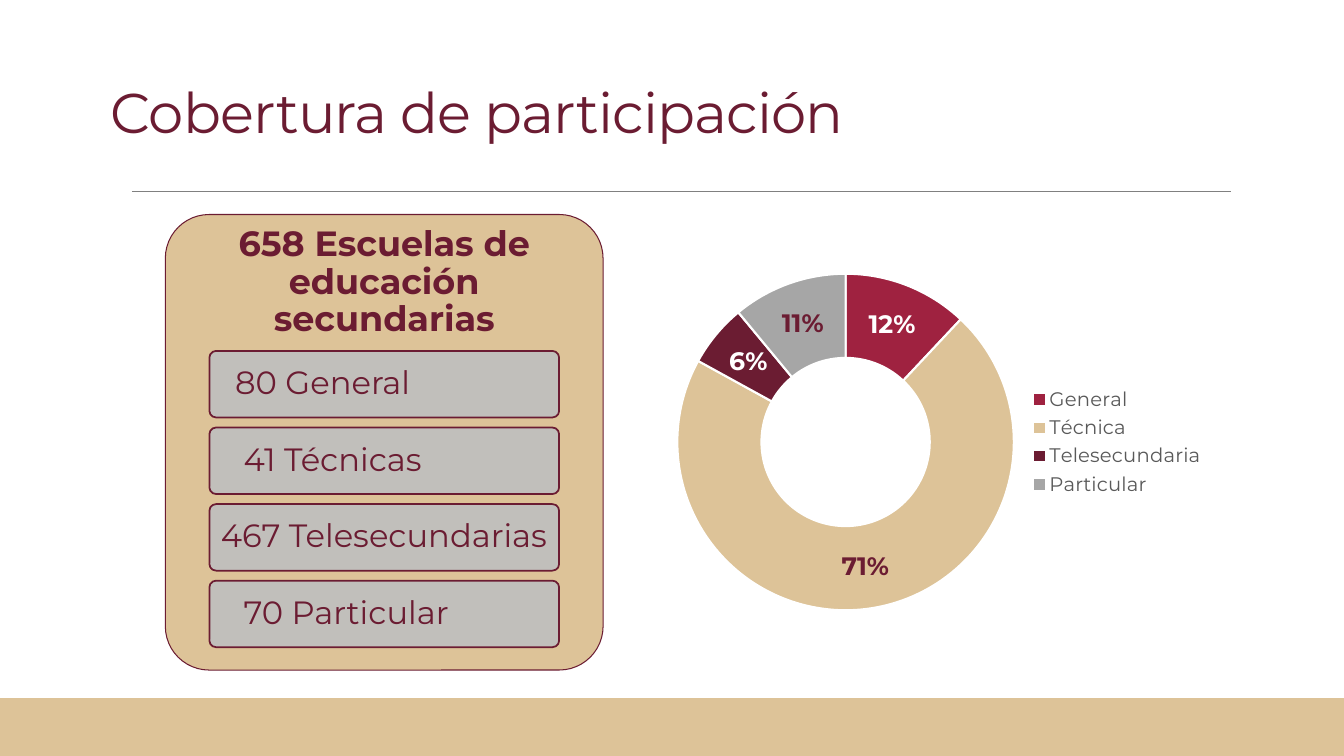
from dataclasses import dataclass

from lxml.etree import SubElement
from pptx import Presentation
from pptx.chart.data import CategoryChartData
from pptx.dml.color import RGBColor
from pptx.enum.chart import XL_CHART_TYPE as ChartType, XL_LEGEND_POSITION as LegendPosition
from pptx.enum.shapes import MSO_CONNECTOR as Connector, MSO_SHAPE as Shape
from pptx.enum.text import MSO_ANCHOR as Anchor, PP_ALIGN as Align
from pptx.oxml import parse_xml
from pptx.oxml.ns import nsdecls, qn
from pptx.util import Pt


@dataclass(frozen=True)
class Theme:
    font: str = "Montserrat"
    wine: RGBColor = RGBColor(0x6B, 0x1C, 0x32)
    red: RGBColor = RGBColor(0x9F, 0x22, 0x40)
    sand: RGBColor = RGBColor(0xDD, 0xC3, 0x98)
    silver: RGBColor = RGBColor(0xA6, 0xA6, 0xA6)
    card: RGBColor = RGBColor(0xBF, 0xBF, 0xBF)
    rule: RGBColor = RGBColor(0x80, 0x80, 0x80)
    legend: RGBColor = RGBColor(0x59, 0x59, 0x59)
    white: RGBColor = RGBColor(0xFF, 0xFF, 0xFF)
    title_size: int = 40
    heading_size: int = 25
    card_size: int = 23
    label_size: int = 18
    legend_size: int = 14


theme = Theme()
presentation = Presentation()
presentation.slide_width, presentation.slide_height = Pt(960), Pt(540)
slide = presentation.slides.add_slide(presentation.slide_layouts[6])


def add_block(kind, left, top, width, height, fill, line_width=0):
    """Add a filled shape, outlined in wine when line_width is given."""
    shape = slide.shapes.add_shape(kind, Pt(left), Pt(top), Pt(width), Pt(height))
    shape.shadow.inherit = False
    shape.fill.solid()
    shape.fill.fore_color.rgb = fill
    if line_width:
        shape.line.color.rgb = theme.wine
        shape.line.width = Pt(line_width)
        shape.adjustments[0] = 0.1
    else:
        shape.line.fill.background()
    return shape


def write_text(shape, text, size, align, anchor, insets, spacing, bold=False):
    """Fill a shape with one wine paragraph; insets are (horizontal, vertical) or four sides."""
    frame = shape.text_frame
    frame.word_wrap = True
    frame.vertical_anchor = anchor
    left, top, right, bottom = insets
    frame.margin_left, frame.margin_top = Pt(left), Pt(top)
    frame.margin_right, frame.margin_bottom = Pt(right), Pt(bottom)
    paragraph = frame.paragraphs[0]
    paragraph.alignment = align
    paragraph.line_spacing = spacing
    run = paragraph.add_run()
    run.text = text
    run.font.name, run.font.size, run.font.bold = theme.font, Pt(size), bold
    run.font.color.rgb = theme.wine
    return run


# Footer band, rule and title
add_block(Shape.RECTANGLE, 0, 498.6, 960, 41.4, theme.sand)

rule = slide.shapes.add_connector(Connector.STRAIGHT, Pt(94.3), Pt(136.8), Pt(879), Pt(136.8))
rule.line.color.rgb = theme.rule
rule.line.width = Pt(0.5)
SubElement(rule._element.spPr, qn("a:effectLst"))

title = slide.shapes.add_textbox(Pt(72), Pt(31), Pt(597.6), Pt(76.3))
title_run = write_text(title, "Cobertura de participación", theme.title_size,
                       Align.LEFT, Anchor.BOTTOM, (7.2, 3.6, 7.2, 3.6), 0.85)
title_run.font._element.set("spc", "-50")

# Schools panel
panel_left, panel_top, panel_width = 118.1, 153.2, 312.7
add_block(Shape.ROUNDED_RECTANGLE, panel_left, panel_top, panel_width, 325.4, theme.sand, 0.75)
heading = slide.shapes.add_textbox(Pt(panel_left), Pt(panel_top), Pt(panel_width), Pt(97.6))
write_text(heading, "658 Escuelas de educación secundarias", theme.heading_size,
           Align.CENTER, Anchor.MIDDLE, (7.2, 7.2, 7.2, 7.2), 0.9, bold=True)

schools = [
    ("80 General", Align.LEFT, 17),
    ("41 Técnicas", Align.LEFT, 23),
    ("467 Telesecundarias", Align.CENTER, 5),
    ("70 Particular", Align.LEFT, 23),
]
card_top, card_pitch = 250.7, 54.7
for index, (text, align, indent) in enumerate(schools):
    card = add_block(Shape.ROUNDED_RECTANGLE, 149.6, card_top + index * card_pitch,
                     249.8, 47.5, theme.card, 1.25)
    color = card.fill._xPr.find(qn("a:solidFill"))[0]
    SubElement(color, qn("a:alpha"), val="90000")
    write_text(card, text, theme.card_size, align, Anchor.MIDDLE, (indent, 5, 5, 5), 0.9)

# Doughnut chart: name, percentage, slice colour, label colour
slices = [
    ("General", 12, theme.red, theme.white),
    ("Técnica", 71, theme.sand, theme.wine),
    ("Telesecundaria", 6, theme.wine, theme.white),
    ("Particular", 11, theme.silver, theme.wine),
]
data = CategoryChartData()
data.categories = [name for name, *_ in slices]
data.add_series("Series 1", [value for _, value, *_ in slices])
chart = slide.shapes.add_chart(ChartType.DOUGHNUT, Pt(470.9), Pt(182.2),
                               Pt(397.4), Pt(267.1), data).chart
chart.has_title = False
chart.font.name = theme.font
chart.has_legend = True
chart.legend.position = LegendPosition.RIGHT
chart.legend.include_in_layout = False
chart.legend.font.name = theme.font
chart.legend.font.size = Pt(theme.legend_size)
chart.legend.font.color.rgb = theme.legend

plot = chart.plots[0]
plot.vary_by_categories = True
for index, (_, _, fill, label_color) in enumerate(slices):
    point = plot.series[0].points[index]
    point.format.fill.solid()
    point.format.fill.fore_color.rgb = fill
    point.format.line.color.rgb = theme.white
    point.format.line.width = Pt(1.5)
    font = point.data_label.font
    font.name, font.size, font.bold = theme.font, Pt(theme.label_size), True
    font.color.rgb = label_color

for label in chart._chartSpace.iter(qn("c:dLbl")):
    label.find(qn("c:showVal")).set("val", "0")
    label.find(qn("c:showPercent")).set("val", "1")
    label.find(qn("c:idx")).addnext(parse_xml(
        f'<c:numFmt {nsdecls("c")} formatCode="0%" sourceLinked="0"/>'))

plot_area = chart._chartSpace.chart.plotArea
for old_layout in plot_area.findall(qn("c:layout")):
    plot_area.remove(old_layout)
plot_area.insert(0, parse_xml(
    f'<c:layout {nsdecls("c")}><c:manualLayout><c:layoutTarget val="inner"/>'
    '<c:xMode val="edge"/><c:yMode val="edge"/><c:x val="0.03"/><c:y val="0.05"/>'
    '<c:w val="0.61"/><c:h val="0.9"/></c:manualLayout></c:layout>'))

presentation.save("out.pptx")
